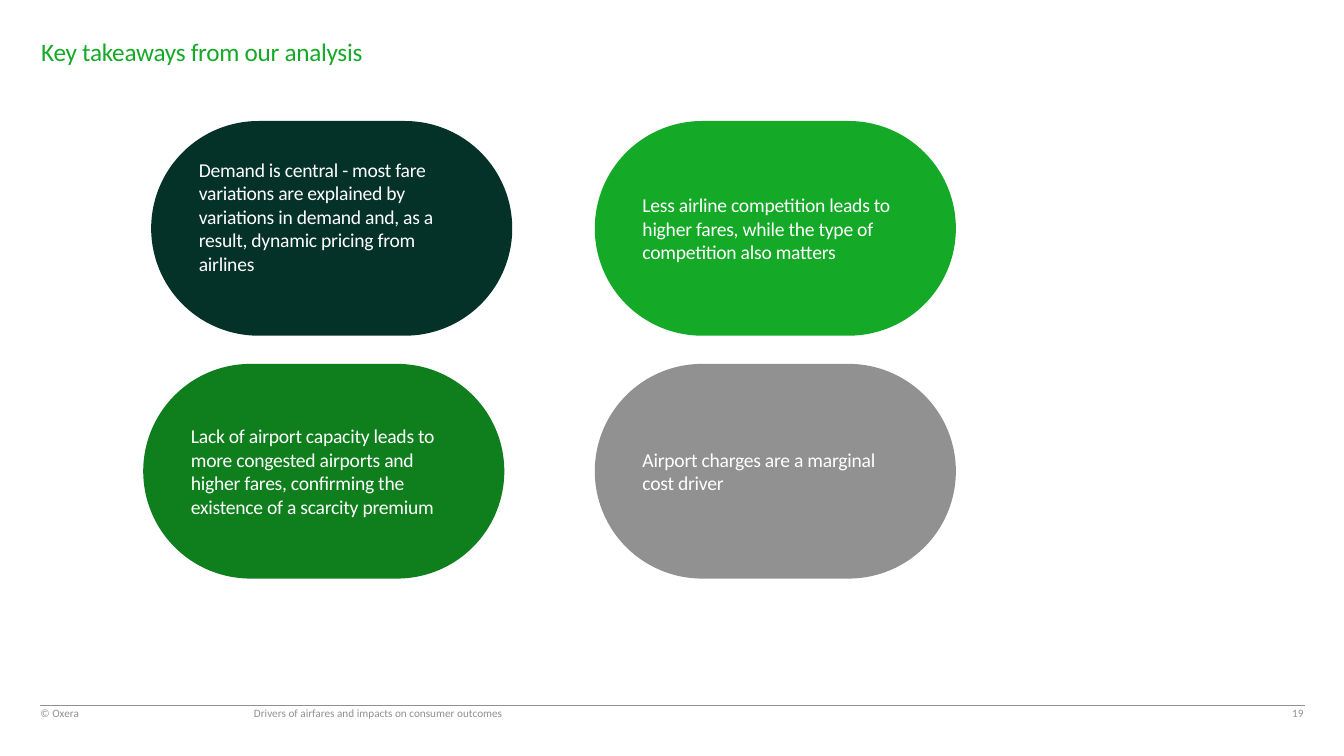
"""Build the slide of key takeaways on airfares."""
from pptx import Presentation
from pptx import util as u
from pptx.dml.color import RGBColor
from pptx.enum import shapes, text
from pptx.oxml.ns import qn
from lxml import etree

THEME = {
    "font": "Calibri", "title": 18, "body": 14, "footer": 8,
    "green": "14AA28", "dark": "053228", "forest": "0F7F1E",
    "grey": "919191", "white": "FFFFFF",
}
TITLE = ("Key takeaways from our analysis", (1.04, 0.71, 23.75, 0.91))
FOOTERS = [
    ("© Oxera", (1.02, 17.53, 1.78, 0.74), 0, "LEFT"),
    ("Drivers of airfares and impacts on consumer outcomes",
     (6.15, 17.68, 13.06, 0.58), 0.25, "LEFT"),
    ("19", (25.48, 17.53, 7.62, 0.74), 0.25, "RIGHT"),
]
RULE = (1.02, 17.78, 32.89, 17.78)
TAKEAWAYS = [
    ("Demand is central - most fare variations are explained by variations "
     "in demand and, as a result, dynamic pricing from airlines", "dark", 3.81, 0.7),
    ("Less airline competition leads to higher fares, while the type of "
     "competition also matters", "green", 14.99, 0.1),
    ("Lack of airport capacity leads to more congested airports and higher "
     "fares, confirming the existence of a scarcity premium", "forest", 3.61, 0.1),
    ("Airport charges are a marginal cost driver", "grey", 14.99, 0.1),
]
PILL_TOP, PILL_PITCH, PILL_W, PILL_H = 3.05, 6.12, 9.1, 5.41


def color(name):
    return RGBColor.from_string(THEME[name])


def write(sp, words, size, ink, insets, anchor, align="LEFT", leading=None, tight=False):
    tf = sp.text_frame
    tf.text = words
    tf.word_wrap = True
    tf.vertical_anchor = text.MSO_ANCHOR[anchor]
    tf.margin_left, tf.margin_top, tf.margin_right, tf.margin_bottom = map(u.Cm, insets)
    p = tf.paragraphs[0]
    p.alignment = text.PP_ALIGN[align]
    if leading:
        p.line_spacing = u.Pt(leading)
    r = p.runs[0]
    r.font.name, r.font.size = THEME["font"], u.Pt(THEME[size])
    r.font.color.rgb = color(ink)
    if tight:
        r._r.get_or_add_rPr().set("spc", "-20")


def main():
    prs = Presentation()
    prs.slide_width, prs.slide_height = u.Cm(33.87), u.Cm(19.05)
    s = prs.slides.add_slide(prs.slide_layouts[6])

    rule = s.shapes.add_connector(shapes.MSO_CONNECTOR.STRAIGHT, *map(u.Cm, RULE))
    rule.line.color.rgb, rule.line.width = color("grey"), u.Pt(0.5)
    etree.SubElement(rule._element.spPr, qn("a:effectLst"))

    for words, box, left, align in FOOTERS:
        sp = s.shapes.add_textbox(*map(u.Cm, box))
        write(sp, words, "footer", "grey", (left, 0.13, 0.25, 0.13), "BOTTOM", align, 10)

    words, box = TITLE
    sp = s.shapes.add_textbox(*map(u.Cm, box))
    write(sp, words, "title", "green", (0, 0.13, 0.25, 0), "TOP", leading=24, tight=True)

    for i, (words, fill, left, bottom) in enumerate(TAKEAWAYS):
        box = (left, PILL_TOP + i // 2 * PILL_PITCH, PILL_W, PILL_H)
        sp = s.shapes.add_shape(shapes.MSO_SHAPE.ROUNDED_RECTANGLE, *map(u.Cm, box))
        sp.adjustments[0] = 0.5
        sp.shadow.inherit = False
        sp.fill.solid()
        sp.fill.fore_color.rgb = color(fill)
        sp.line.fill.background()
        write(sp, words, "body", "white", (0.41, 0.1, 0.41, bottom), "MIDDLE", tight=True)

    prs.save("out.pptx")


if __name__ == "__main__":
    main()
